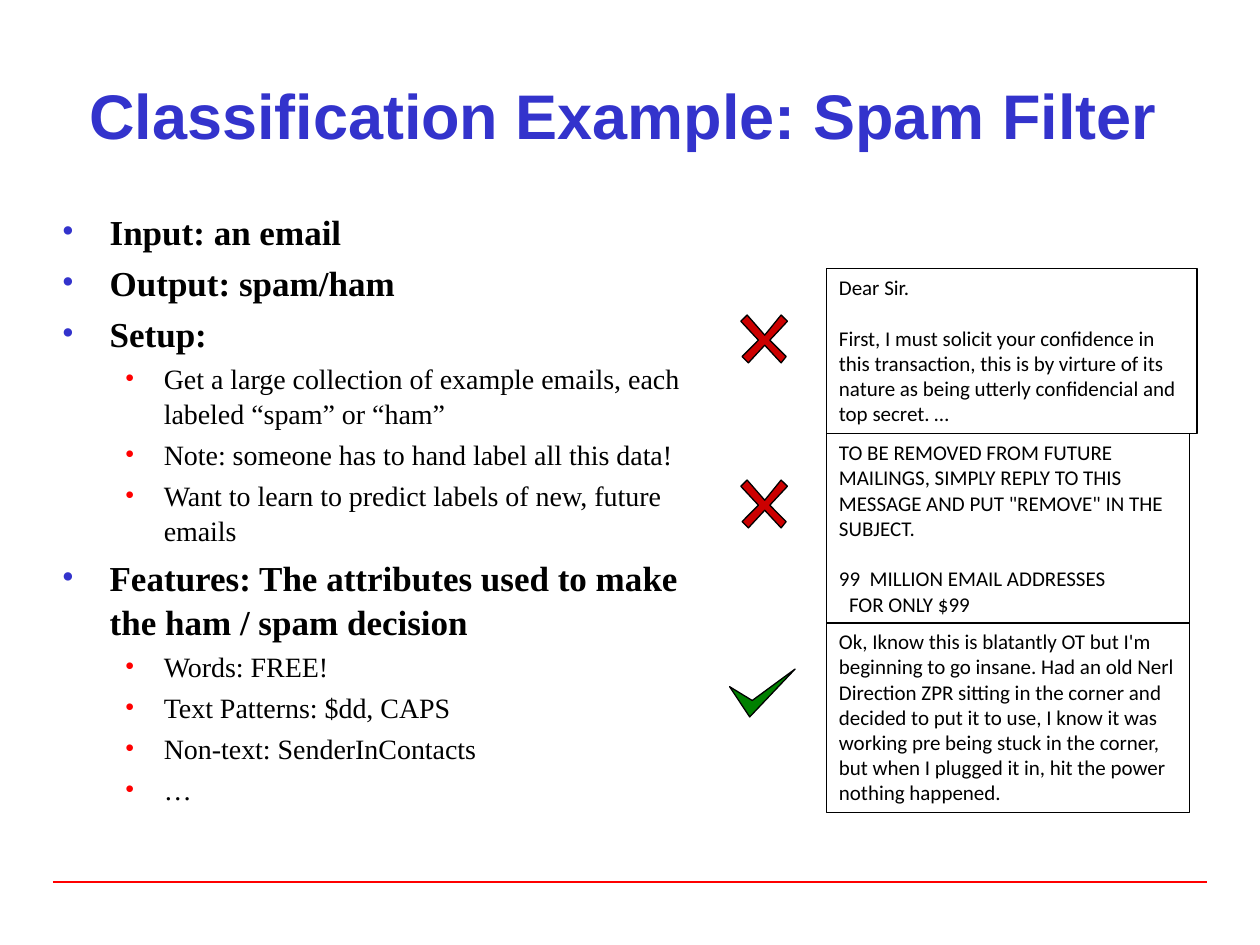
from dataclasses import dataclass

from lxml import etree
from pptx import Presentation
from pptx.dml.color import RGBColor
from pptx.enum.shapes import MSO_CONNECTOR, MSO_SHAPE
from pptx.enum.text import MSO_ANCHOR, MSO_AUTO_SIZE, PP_ALIGN
from pptx.oxml.ns import qn
from pptx.util import Inches, Pt

LINE, RECT = MSO_CONNECTOR.STRAIGHT, MSO_SHAPE.RECTANGLE
MIDDLE, TOP = MSO_ANCHOR.MIDDLE, MSO_ANCHOR.TOP
LEFT, CENTER = PP_ALIGN.LEFT, PP_ALIGN.CENTER
FIXED = MSO_AUTO_SIZE.NONE


@dataclass(frozen=True)
class Theme:
    blue: str = "3333CC"
    red: str = "FF0000"
    black: str = "000000"
    spam: str = "CC0000"
    ham: str = "008000"
    head: str = "Arial"
    body: str = "Times New Roman"
    mail: str = "Calibri"
    title: int = 36
    main: int = 20
    sub: int = 16
    note: int = 12


THEME = Theme()

# Level and wording of each list item
ITEMS = [
    (0, "Input: an email"),
    (0, "Output: spam/ham"),
    (0, "Setup:"),
    (1, "Get a large collection of example emails, each labeled “spam” or “ham”"),
    (1, "Note: someone has to hand label all this data!"),
    (1, "Want to learn to predict labels of new, future emails"),
    (0, "Features: The attributes used to make the ham / spam decision"),
    (1, "Words: FREE!"),
    (1, "Text Patterns: $dd, CAPS"),
    (1, "Non-text: SenderInContacts"),
    (1, "…"),
]

# Mail paragraphs: wording, space before in points, left indent in inches
GAP = 14.5
MAILS = [
    ((6.56, 2.13, 2.94, 1.31), [
        ("Dear Sir.", 0, 0),
        ("First, I must solicit your confidence in this transaction, this is "
         "by virture of its nature as being utterly confidencial and top "
         "secret. …", GAP, 0),
    ]),
    ((6.56, 3.44, 2.88, 1.51), [
        ("TO BE REMOVED FROM FUTURE MAILINGS, SIMPLY REPLY TO THIS MESSAGE "
         'AND PUT "REMOVE" IN THE SUBJECT.', 0, 0),
        ("99  MILLION EMAIL ADDRESSES", GAP, 0),
        ("FOR ONLY $99", 0, 0.08),
    ]),
    ((6.56, 4.94, 2.88, 1.51), [
        ("Ok, Iknow this is blatantly OT but I'm beginning to go insane. Had "
         "an old Nerl Direction ZPR sitting in the corner and decided to put "
         "it to use, I know it was working pre being stuck in the corner, but "
         "when I plugged it in, hit the power nothing happened.", 0, 0),
    ]),
]

# Mark outlines in hundredths of an inch from the top left of their box
CROSS = [(0, 5), (14, 20), (1, 33), (6, 38), (19, 24), (32, 38), (36, 33),
         (23, 20), (37, 5), (32, 0), (19, 16), (5, 0)]
CHECK = [(16, 38), (52, 0), (18, 25), (0, 14)]
MARKS = [
    (5.79, 5.31, CHECK, THEME.ham),
    (5.88, 2.5, CROSS, THEME.spam),
    (5.88, 3.81, CROSS, THEME.spam),
]


def rgb(code):
    return RGBColor.from_string(code)


def place(shape, box):
    shape.left, shape.top, shape.width, shape.height = map(Inches, box)


def style(para, face, size, color, bold=False):
    font = para.font
    font.name, font.size, font.bold = face, Pt(size), bold
    font.color.rgb = rgb(color)


def outline(shape):
    shape.shadow.inherit = False
    shape.line.color.rgb = rgb(THEME.black)
    shape.line.width = Pt(0.75)


def indent(para, left, first=0):
    props = para._p.get_or_add_pPr()
    props.set("marL", str(Inches(left)))
    props.set("indent", str(Inches(first)))
    return props


def bullet(para, level):
    left, hang, color = [(0.38, -0.38, THEME.blue),
                         (0.81, -0.31, THEME.red)][level]
    props = indent(para, left, hang)
    tint = etree.SubElement(props, qn("a:buClr"))
    etree.SubElement(tint, qn("a:srgbClr"), val=color)
    etree.SubElement(props, qn("a:buFont"), typeface=THEME.body)
    etree.SubElement(props, qn("a:buChar"), char="•")


def add_title(slide, box, text):
    title = slide.shapes.title
    place(title, box)
    frame = title.text_frame
    frame.text = text
    frame.auto_size, frame.vertical_anchor = FIXED, MIDDLE
    para = frame.paragraphs[0]
    para.alignment = CENTER
    style(para, THEME.head, THEME.title, THEME.blue, True)


def add_list(slide, box, items):
    body = slide.placeholders[1]
    place(body, box)
    frame = body.text_frame
    frame.text = "\n".join(text for _, text in items)
    frame.auto_size, frame.vertical_anchor = FIXED, TOP
    for para, (level, _) in zip(frame.paragraphs, items):
        size = THEME.sub if level else THEME.main
        para.level = level
        para.line_spacing = 1.05
        para.space_before = Pt(size * 0.2)
        bullet(para, level)
        style(para, THEME.body, size, THEME.black, level == 0)


def add_mail(slide, box, parts):
    mail = slide.shapes.add_shape(RECT, *map(Inches, box))
    mail.fill.background()
    outline(mail)
    frame = mail.text_frame
    frame.text = "\n".join(text for text, _, _ in parts)
    frame.word_wrap, frame.vertical_anchor = True, TOP
    for para, (_, gap, left) in zip(frame.paragraphs, parts):
        para.alignment = LEFT
        para.space_before = Pt(gap)
        indent(para, left)
        style(para, THEME.mail, THEME.note, THEME.black)


def add_mark(slide, left, top, points, color):
    pen = slide.shapes.build_freeform(*points[0], scale=Inches(0.01))
    pen.add_line_segments(points[1:], close=True)
    mark = pen.convert_to_shape(Inches(left), Inches(top))
    mark.fill.solid()
    mark.fill.fore_color.rgb = rgb(color)
    outline(mark)


def add_rule(slide, left, right, top):
    rule = slide.shapes.add_connector(
        LINE, Inches(left), Inches(top), Inches(right), Inches(top))
    rule.line.color.rgb = rgb(THEME.red)
    rule.line.width = Pt(1)
    etree.SubElement(rule._element.spPr, qn("a:effectLst"))


def main():
    deck = Presentation()
    deck.slide_width, deck.slide_height = Inches(10), Inches(7.5)
    slide = deck.slides.add_slide(deck.slide_layouts[1])

    add_rule(slide, 0.42, 9.58, 7)
    add_title(slide, (0.54, 0.44, 8.81, 0.93),
              "Classification Example: Spam Filter")
    add_list(slide, (0.39, 1.6, 5.27, 4.91), ITEMS)

    # Sample mails and their verdicts
    for box, parts in MAILS:
        add_mail(slide, box, parts)
    for mark in MARKS:
        add_mark(slide, *mark)

    deck.save("out.pptx")


if __name__ == "__main__":
    main()
